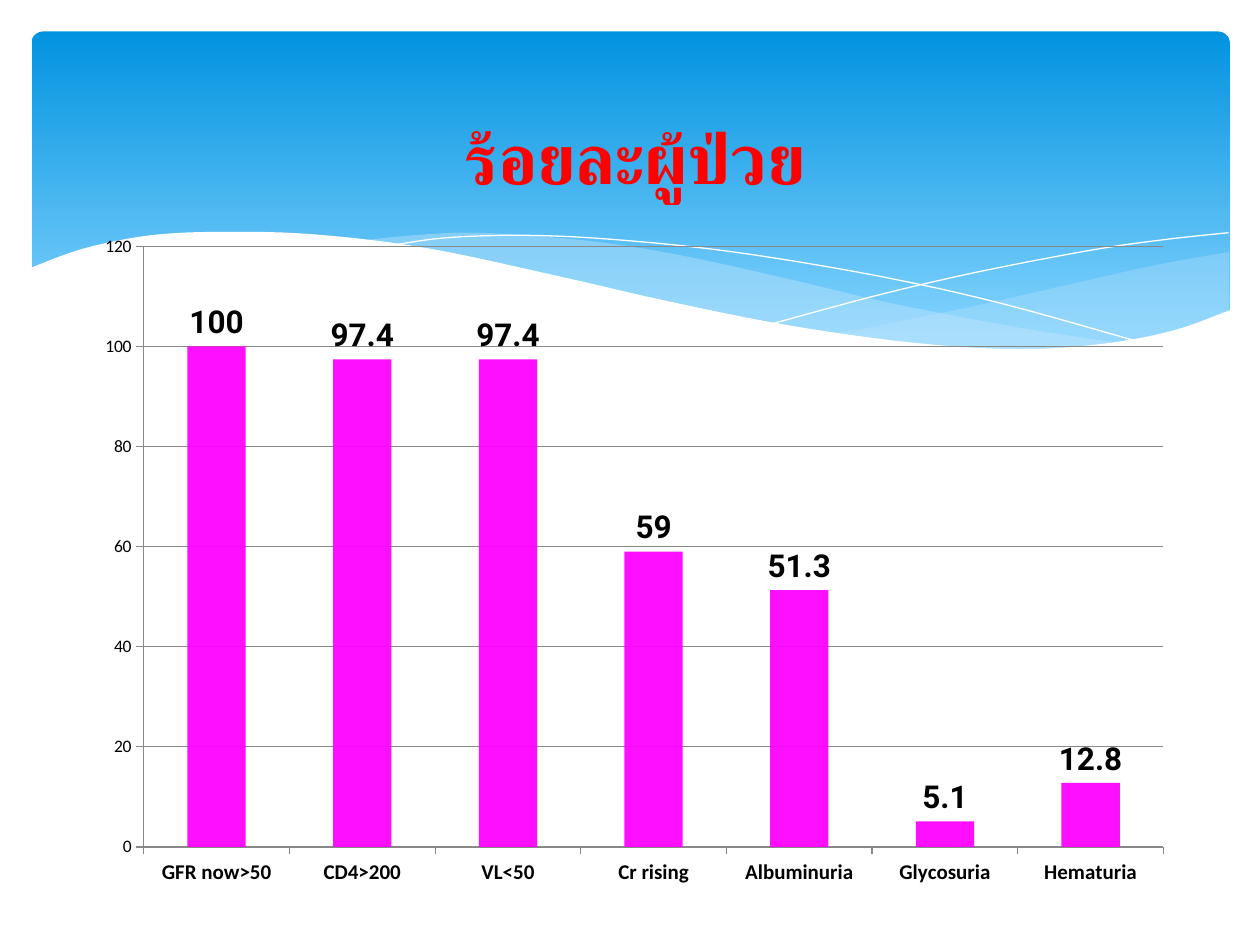
from lxml import etree
from pptx import Presentation
from pptx.chart.data import CategoryChartData
from pptx.dml.color import RGBColor
from pptx.enum.chart import XL_CHART_TYPE, XL_LABEL_POSITION, XL_TICK_MARK
from pptx.enum.shapes import MSO_SHAPE
from pptx.oxml import parse_xml
from pptx.oxml.ns import nsdecls, qn
from pptx.util import Pt

COLUMNS = XL_CHART_TYPE.COLUMN_CLUSTERED
OUTSIDE_END = XL_LABEL_POSITION.OUTSIDE_END
TICK_OUT, TICK_NONE = XL_TICK_MARK.OUTSIDE, XL_TICK_MARK.NONE
ROUNDED = MSO_SHAPE.ROUNDED_RECTANGLE

WHITE = RGBColor(0xFF, 0xFF, 0xFF)
BLACK = RGBColor(0, 0, 0)
RED = RGBColor(0xFF, 0, 0)
MAGENTA = RGBColor(0xFF, 0, 0xFF)
GREY = RGBColor(0x88, 0x88, 0x88)
SKY_DARK = RGBColor(0x02, 0x93, 0xE0)
SKY_LIGHT = RGBColor(0x83, 0xD3, 0xFE)
MIST = RGBColor(0xC6, 0xE7, 0xFC)

TITLE = "ร้อยละผู้ป่วย"
RESULTS = {
    "GFR now>50": 100, "CD4>200": 97.4, "VL<50": 97.4, "Cr rising": 59,
    "Albuminuria": 51.3, "Glycosuria": 5.1, "Hematuria": 12.8,
}

# Each wave edge is a list of points that a smooth curve passes through.
RIGHT_TOP = [(702.5, 144), (663, 151), (620, 160.5), (561, 174), (508, 185), (476, 191)]
RIGHT_BOTTOM = [(476, 191), (517.5, 196), (553.5, 199), (586, 200), (628, 197.5),
                (663, 191), (702.5, 178)]
MIDDLE_TOP = [(643, 196.5), (581, 187), (508, 173), (453, 160), (389.5, 146),
              (335, 137.5), (273.5, 133), (236, 134.5), (206, 137.5)]
MIDDLE_BOTTOM = [(206, 137.5), (260.5, 146), (323, 160), (407.5, 178.5), (468, 190),
                 (520, 197), (573, 200), (610.5, 199.5), (643, 196.5)]
FALLING_LINE = [(222.5, 140.5), (254, 136), (299.5, 134.5), (352, 137), (419, 144),
                (500.5, 157.5), (572.5, 173.5), (653, 196)]
RISING_LINE = [(441.5, 185), (500.5, 169), (558.5, 155.5), (623.5, 143), (665, 137),
               (702, 133)]
FRONT_EDGE = [(703.5, 177), (670, 189), (630, 196.5), (582, 199.5), (523, 196),
              (451, 186), (381, 172), (322, 158.5), (245, 142), (180, 134),
              (127, 132.5), (86, 134.5), (48, 142), (16.5, 153.5)]
FRONT_BASE = [(16.5, 237), (703.5, 237)]


def smooth(knots, steps=6):
    """Return points on a Catmull-Rom curve through the knots."""
    padded = [knots[0], *knots, knots[-1]]
    curve = [knots[0]]
    for a, b, c, d in zip(padded, padded[1:], padded[2:], padded[3:]):
        for step in range(1, steps + 1):
            t = step / steps
            curve.append(tuple(
                (2 * q + (r - p) * t + (2 * p - 5 * q + 4 * r - s) * t ** 2
                 + (3 * q - p - 3 * r + s) * t ** 3) / 2
                for p, q, r, s in zip(a, b, c, d)))
    return curve


def set_alpha(fill, percent):
    color = fill._xPr.find(".//" + qn("a:srgbClr"))
    etree.SubElement(color, qn("a:alpha"), val=str(percent * 1000))


def format_font(font, size, color=BLACK, name="Calibri", bold=False):
    font.size, font.bold, font.name = Pt(size), bold, name
    font.color.rgb = color


def write_text(frame, text, **style):
    span = frame.paragraphs[0].add_run()
    span.text = text
    format_font(span.font, **style)


def place_plot(chart, **fractions):
    """Fix the inner plot area as fractions of the chart."""
    values = "".join(f'<c:{key} val="{value}"/>' for key, value in fractions.items())
    layout = parse_xml(
        f'<c:layout {nsdecls("c")}><c:manualLayout><c:layoutTarget val="inner"/>'
        f'<c:xMode val="edge"/><c:yMode val="edge"/>{values}'
        '</c:manualLayout></c:layout>')
    plot_area = chart._chartSpace.chart.plotArea
    for old in plot_area.findall(qn("c:layout")):
        plot_area.remove(old)
    plot_area.insert(0, layout)


class Slide:
    def __init__(self, page):
        self.shapes = page.shapes

    def sky(self, left, top, width, height):
        box = self.shapes.add_shape(ROUNDED, Pt(left), Pt(top), Pt(width), Pt(height))
        box.shadow.inherit = False
        box.adjustments[0] = 0.034
        box.line.fill.background()
        box.fill.gradient()
        box.fill.gradient_angle = 270
        stops = zip(box.fill.gradient_stops, (SKY_DARK, SKY_LIGHT), (0, 0.9))
        for stop, color, position in stops:
            stop.color.rgb, stop.position = color, position

    def outline(self, points, closed):
        corners = [(Pt(x), Pt(y)) for x, y in points]
        builder = self.shapes.build_freeform(*corners[0])
        builder.add_line_segments(corners[1:], close=closed)
        shape = builder.convert_to_shape()
        shape.shadow.inherit = False
        return shape

    def wave(self, points, color, opacity=100):
        shape = self.outline(points, closed=True)
        shape.line.fill.background()
        shape.fill.solid()
        shape.fill.fore_color.rgb = color
        if opacity < 100:
            set_alpha(shape.fill, opacity)

    def curve(self, points, color):
        shape = self.outline(points, closed=False)
        shape.fill.background()
        shape.line.color.rgb = color
        shape.line.width = Pt(0)

    def column_chart(self, left, top, width, height, title, results):
        data = CategoryChartData()
        data.categories = results.keys()
        data.add_series(title, results.values())
        chart = self.shapes.add_chart(
            COLUMNS, Pt(left), Pt(top), Pt(width), Pt(height), data).chart
        format_font(chart.font, 10)
        chart.has_legend = False
        chart.has_title = True
        write_text(chart.chart_title.text_frame, title, size=40, color=RED, bold=True)
        chart.chart_title.include_in_layout = False
        place_plot(chart, x=0.054, y=0.197, w=0.926, h=0.737)

        values, categories = chart.value_axis, chart.category_axis
        for axis, size, bold in ((values, 10, False), (categories, 12, True)):
            format_font(axis.tick_labels.font, size, bold=bold)
            axis.major_tick_mark, axis.minor_tick_mark = TICK_OUT, TICK_NONE
            axis.format.line.color.rgb = GREY
        values.minimum_scale, values.maximum_scale, values.major_unit = 0, 120, 20
        values.has_major_gridlines = True
        values.major_gridlines.format.line.color.rgb = GREY

        plot = chart.plots[0]
        plot.gap_width, plot.vary_by_categories = 150, False
        fill = plot.series[0].format.fill
        fill.solid()
        fill.fore_color.rgb = MAGENTA
        set_alpha(fill, 94)
        labels = plot.series[0].data_labels
        labels.show_value, labels.position = True, OUTSIDE_END
        format_font(labels.font, 18, name="Roboto", bold=True)


def main():
    deck = Presentation()
    deck.slide_width, deck.slide_height = Pt(720), Pt(540)
    slide = Slide(deck.slides.add_slide(deck.slide_layouts[6]))
    slide.sky(18, 18, 684.7, 194.4)
    slide.wave(smooth(RIGHT_TOP) + smooth(RIGHT_BOTTOM), MIST, opacity=29)
    slide.wave(smooth(MIDDLE_TOP) + smooth(MIDDLE_BOTTOM), MIST, opacity=40)
    slide.curve(smooth(FALLING_LINE), WHITE)
    slide.curve(smooth(RISING_LINE), WHITE)
    slide.wave(smooth(FRONT_EDGE) + FRONT_BASE, WHITE)
    slide.column_chart(48.2, 49, 629.3, 465.8, TITLE, RESULTS)
    deck.save("out.pptx")


if __name__ == "__main__":
    main()
